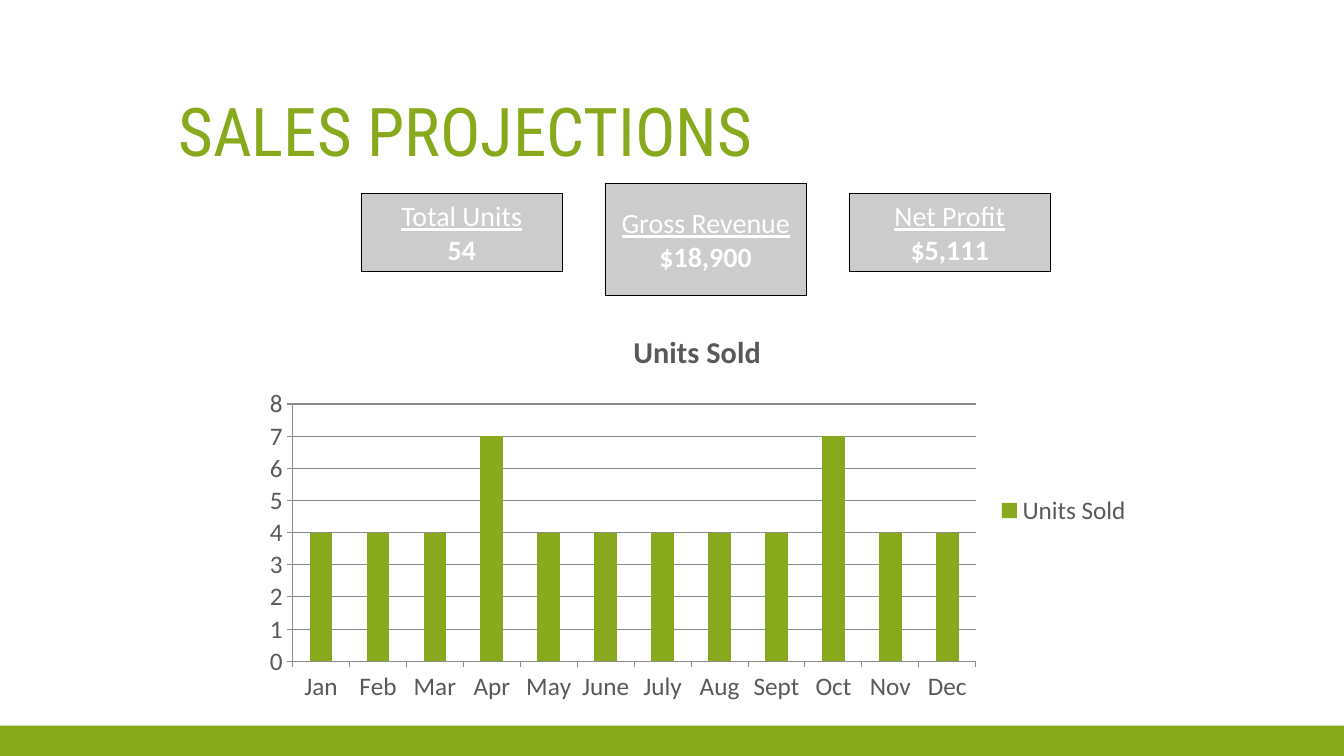
from dataclasses import dataclass
from pptx import Presentation, util as u
from pptx.chart.data import CategoryChartData
from pptx.dml.color import RGBColor
from pptx.enum import chart as charts, shapes, text

TITLE = "SALES PROJECTIONS"
FIGURES = [("Total Units", "54"), ("Gross Revenue", "$18,900"), ("Net Profit", "$5,111")]
SERIES = "Units Sold"
UNITS = {
    "Jan": 4, "Feb": 4, "Mar": 4, "Apr": 7, "May": 4, "June": 4,
    "July": 4, "Aug": 4, "Sept": 4, "Oct": 7, "Nov": 4, "Dec": 4,
}


@dataclass(frozen=True)
class Theme:
    green: str = "87A91B"
    panel: str = "CCCCCC"
    white: str = "FFFFFF"
    black: str = "000000"
    label: str = "595959"
    grid: str = "8B8B8B"
    heading: str = "Roboto Condensed"
    body: str = "Calibri"
    title_size: float = 48
    figure_size: float = 20
    chart_size: float = 18
    chart_title_size: float = 21.6


THEME = Theme()
PX = u.Inches(1) // 100
WIDTH, HEIGHT = 1333, 750
BAND_HEIGHT = 30
TITLE_BOX = (167, 50, 1000, 125)
CHART_BOX = (250, 309, 883, 395)
BOX_LEFT, BOX_STEP, BOX_WIDTH, BOX_MIDDLE = 358, 242, 200, 235
BOX_TOPS = (192, 182, 192)
BOX_HEIGHTS = (77, 111, 77)


def place(*lengths):
    return [length * PX for length in lengths]


def apply(target, **values):
    for name, value in values.items():
        setattr(target, name, value)


def style(font, color, size, name=THEME.body, **values):
    apply(font, name=name, size=u.Pt(size), **values)
    font.color.rgb = RGBColor.from_string(color)


def add_rectangle(page, area, fill, outline=None):
    box = page.shapes.add_shape(shapes.MSO_SHAPE.RECTANGLE, *place(*area))
    box.shadow.inherit = False
    box.fill.solid()
    box.fill.fore_color.rgb = RGBColor.from_string(fill)
    if outline:
        box.line.color.rgb = RGBColor.from_string(outline)
        box.line.width = u.Pt(0.25)
    else:
        box.line.fill.background()
    return box


def add_title(page):
    frame = page.shapes.add_textbox(*place(*TITLE_BOX)).text_frame
    apply(frame, word_wrap=True, vertical_anchor=text.MSO_ANCHOR.BOTTOM)
    para = frame.paragraphs[0]
    para.line_spacing = 0.9
    span = para.add_run()
    span.text = TITLE
    style(span.font, THEME.green, THEME.title_size, THEME.heading)


def add_figures(page):
    for index, (lines, top, height) in enumerate(zip(FIGURES, BOX_TOPS, BOX_HEIGHTS)):
        area = (BOX_LEFT + index * BOX_STEP, top, BOX_WIDTH, height)
        frame = add_rectangle(page, area, THEME.panel, THEME.black).text_frame
        apply(frame, word_wrap=True, vertical_anchor=text.MSO_ANCHOR.MIDDLE)
        frame.text = "\n".join(lines)
        for para, emphasis in zip(frame.paragraphs, ({"underline": True}, {"bold": True})):
            para.alignment = text.PP_ALIGN.CENTER
            style(para.runs[0].font, THEME.white, THEME.figure_size, **emphasis)


def add_units_chart(page):
    data = CategoryChartData()
    data.categories = list(UNITS)
    data.add_series(SERIES, list(UNITS.values()))
    kind = charts.XL_CHART_TYPE.COLUMN_CLUSTERED
    chart = page.shapes.add_chart(kind, *place(*CHART_BOX), data).chart
    style(chart.font, THEME.label, THEME.chart_size)

    apply(chart, has_title=True, has_legend=True)
    heading = chart.chart_title.text_frame
    heading.text = SERIES
    style(heading.paragraphs[0].runs[0].font, THEME.label, THEME.chart_title_size, bold=True)
    apply(chart.legend, position=charts.XL_LEGEND_POSITION.RIGHT, include_in_layout=False)

    apply(chart.value_axis, minimum_scale=0, maximum_scale=8, major_unit=1,
          has_major_gridlines=True)
    for axis in (chart.category_axis, chart.value_axis):
        axis.major_tick_mark = charts.XL_TICK_MARK.OUTSIDE
    for owner in (chart.category_axis, chart.value_axis, chart.value_axis.major_gridlines):
        owner.format.line.color.rgb = RGBColor.from_string(THEME.grid)
        owner.format.line.width = u.Pt(0.75)

    plot = chart.plots[0]
    apply(plot, gap_width=150, vary_by_categories=False)
    fill = plot.series[0].format.fill
    fill.solid()
    fill.fore_color.rgb = RGBColor.from_string(THEME.green)


def main():
    deck = Presentation()
    apply(deck, slide_width=WIDTH * PX, slide_height=HEIGHT * PX)
    page = deck.slides.add_slide(deck.slide_layouts[6])
    add_rectangle(page, (0, HEIGHT - BAND_HEIGHT, WIDTH, BAND_HEIGHT), THEME.green)
    add_title(page)
    add_units_chart(page)
    add_figures(page)
    deck.save("out.pptx")


if __name__ == "__main__":
    main()
